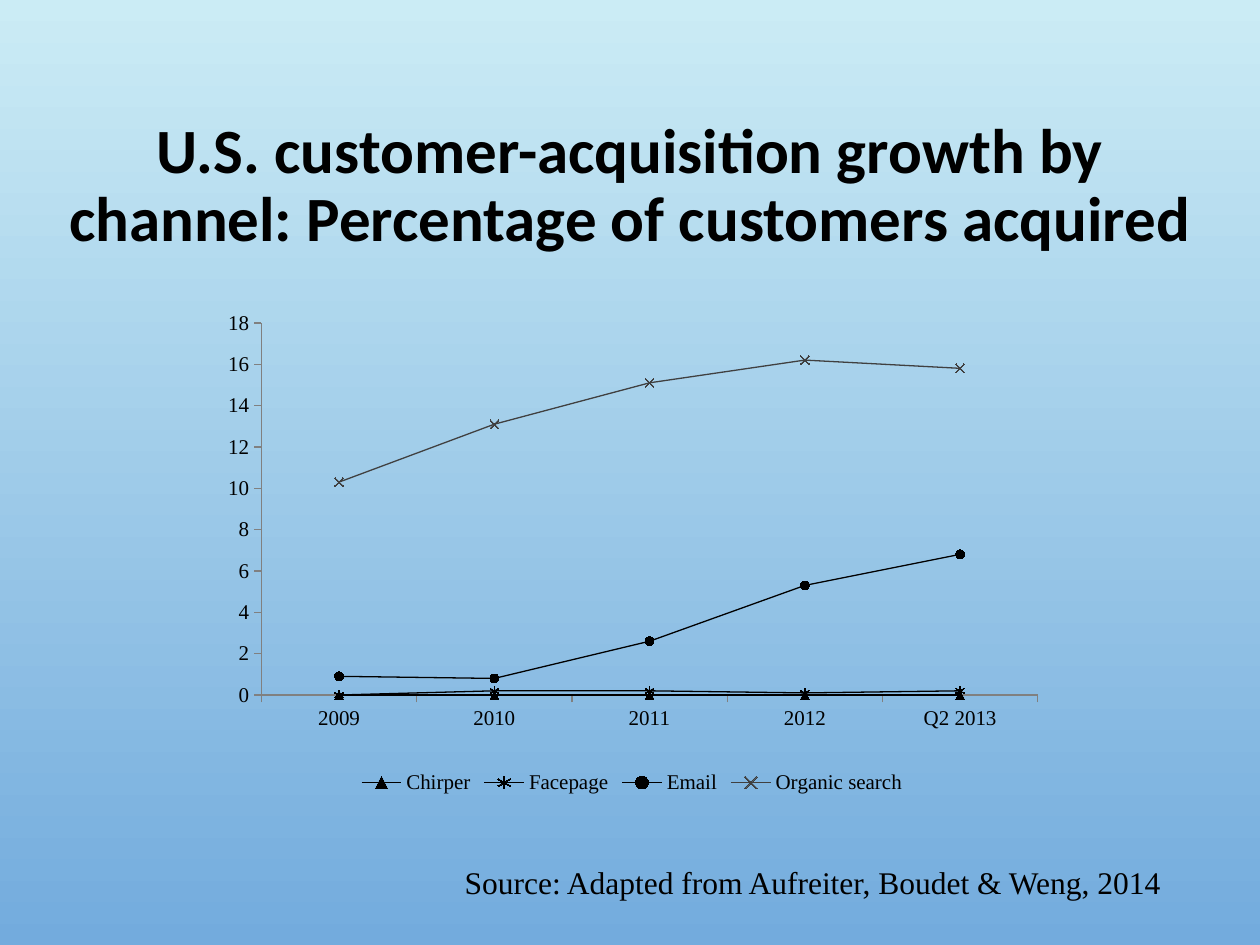
"""Build a slide charting customer-acquisition growth by channel."""
from lxml import etree
from pptx import Presentation
from pptx import util as u
from pptx.chart import data
from pptx.dml import color
from pptx.enum import chart as charts, text
from pptx.oxml import ns

BLACK = color.RGBColor(0x00, 0x00, 0x00)
CHARCOAL = color.RGBColor(0x40, 0x40, 0x40)
AXIS_GRAY = color.RGBColor(0x80, 0x80, 0x80)
SKY_TOP = color.RGBColor(0xCB, 0xEC, 0xF5)
SKY_BOTTOM = color.RGBColor(0x73, 0xAB, 0xDD)

YEARS = ["2009", "2010", "2011", "2012", "Q2 2013"]
MARKER = charts.XL_MARKER_STYLE
CHANNELS = [
    ("Chirper", [0, 0, 0, 0, 0], BLACK, MARKER.TRIANGLE, True),
    ("Facepage", [0, 0.2, 0.2, 0.1, 0.2], BLACK, MARKER.STAR, False),
    ("Email", [0.9, 0.8, 2.6, 5.3, 6.8], BLACK, MARKER.CIRCLE, True),
    ("Organic search", [10.3, 13.1, 15.1, 16.2, 15.8], CHARCOAL, MARKER.X, False),
]
PLOT_LAYOUT = {"layoutTarget": "inner", "xMode": "edge", "yMode": "edge",
               "x": 0.072, "y": 0.051, "w": 0.897, "h": 0.742}


class SlideBuilder:
    heading_font = "Calibri"
    body_font = "Times New Roman"
    line_width = u.Pt(0.75)

    def __init__(self, presentation):
        self.slide = presentation.slides.add_slide(presentation.slide_layouts[6])

    def background(self, *colors):
        fill = self.slide.background.fill
        fill.gradient()
        fill.gradient_angle = 270
        for position, (stop, rgb) in enumerate(zip(fill.gradient_stops, colors)):
            stop.position = position
            stop.color.rgb = rgb

    def label(self, box, words, font, size, bold=False, alignment=text.PP_ALIGN.LEFT,
              anchor=text.MSO_ANCHOR.TOP, line_spacing=1.0):
        frame = self.slide.shapes.add_textbox(*map(u.Pt, box)).text_frame
        frame.word_wrap = True
        frame.vertical_anchor = anchor
        frame.text = words
        paragraph = frame.paragraphs[0]
        paragraph.alignment = alignment
        paragraph.line_spacing = line_spacing
        for run in paragraph.runs:
            run.font.name = font
            run.font.size = u.Pt(size)
            run.font.bold = bold
            run.font.color.rgb = BLACK

    def line_chart(self, box, categories, channels, maximum, step):
        chart_data = data.CategoryChartData()
        chart_data.categories = categories
        for name, values, *_ in channels:
            chart_data.add_series(name, values)
        chart = self.slide.shapes.add_chart(
            charts.XL_CHART_TYPE.LINE_MARKERS, *map(u.Pt, box), chart_data).chart
        chart.has_title = False
        chart.font.name = self.body_font
        chart.font.size = u.Pt(12)
        chart.font.color.rgb = BLACK
        chart.has_legend = True
        chart.legend.position = charts.XL_LEGEND_POSITION.BOTTOM
        chart.legend.include_in_layout = True
        for axis in (chart.category_axis, chart.value_axis):
            axis.has_major_gridlines = False
            axis.major_tick_mark = charts.XL_TICK_MARK.OUTSIDE
            axis.format.line.color.rgb = AXIS_GRAY
            axis.format.line.width = self.line_width
        chart.value_axis.minimum_scale = 0
        chart.value_axis.maximum_scale = maximum
        chart.value_axis.major_unit = step
        chart.plots[0].vary_by_categories = False
        for series, channel in zip(chart.plots[0].series, channels):
            self.style_series(series, *channel[2:])
        self.place_plot(chart)

    def style_series(self, series, rgb, marker_style, filled):
        series.smooth = False
        marker = series.marker
        marker.style = marker_style
        marker.size = 5
        for line in (series.format.line, marker.format.line):
            line.color.rgb = rgb
            line.width = self.line_width
        if filled:
            marker.format.fill.solid()
            marker.format.fill.fore_color.rgb = rgb
        else:
            marker.format.fill.background()

    def place_plot(self, chart):
        plot_area = chart.element.find(".//" + ns.qn("c:plotArea"))
        layout = plot_area.find(ns.qn("c:layout"))
        if layout is None:
            layout = etree.Element(ns.qn("c:layout"))
            plot_area.insert(0, layout)
        manual = etree.SubElement(layout, ns.qn("c:manualLayout"))
        for name, value in PLOT_LAYOUT.items():
            etree.SubElement(manual, ns.qn("c:" + name), val=str(value))


def main():
    presentation = Presentation()
    presentation.slide_width, presentation.slide_height = u.Pt(720), u.Pt(540)
    builder = SlideBuilder(presentation)
    builder.background(SKY_TOP, SKY_BOTTOM)
    builder.label((17.3, 43.9, 685.4, 126),
                  "U.S. customer-acquisition growth by channel: "
                  "Percentage of customers acquired",
                  builder.heading_font, 36, bold=True, alignment=text.PP_ALIGN.CENTER,
                  anchor=text.MSO_ANCHOR.MIDDLE, line_spacing=0.9)
    builder.line_chart((113.8, 169.9, 494.6, 286.6), YEARS, CHANNELS, maximum=18, step=2)
    builder.label((258.5, 489.6, 427.7, 28.8),
                  "Source: Adapted from Aufreiter, Boudet & Weng, 2014",
                  builder.body_font, 18)
    presentation.save("out.pptx")


if __name__ == "__main__":
    main()
